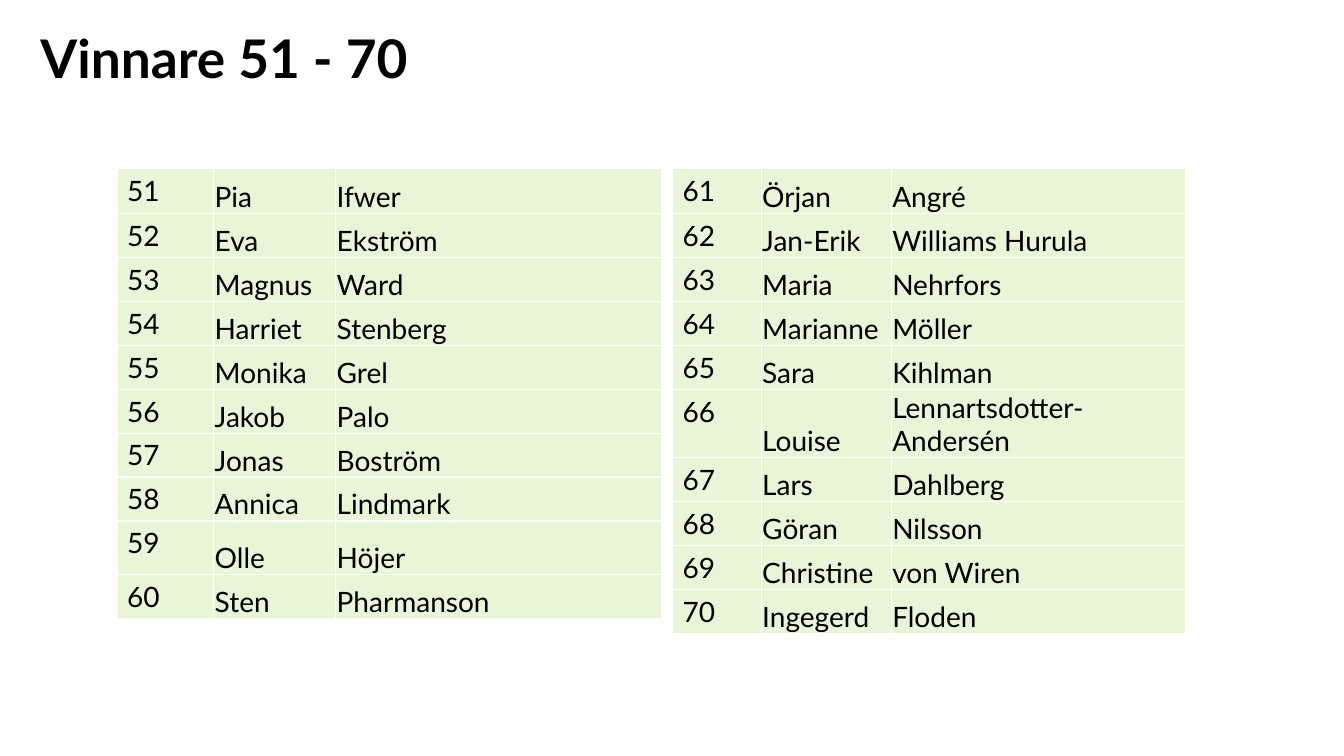
from dataclasses import dataclass

import pptx
import pptx.dml.color
import pptx.enum.text
import pptx.oxml
import pptx.oxml.ns
import pptx.util
from pptx.util import Inches


@dataclass(frozen=True)
class Theme:
    font: str = "Lato"
    text: str = "000000"
    cell: str = "E8F5D6"
    border: str = "FFFFFF"
    border_width: int = 1
    title_size: int = 38
    body_size: int = 20


THEME = Theme()
ANCHOR = pptx.enum.text.MSO_ANCHOR
ROW_HEIGHT = 0.41

WINNERS_51 = [
    ("Pia", "Ifwer"), ("Eva", "Ekström"), ("Magnus", "Ward"),
    ("Harriet", "Stenberg"), ("Monika", "Grel"), ("Jakob", "Palo"),
    ("Jonas", "Boström"), ("Annica", "Lindmark"), ("Olle", "Höjer"),
    ("Sten", "Pharmanson"),
]
WINNERS_61 = [
    ("Örjan", "Angré"), ("Jan-Erik", "Williams Hurula"), ("Maria", "Nehrfors"),
    ("Marianne", "Möller"), ("Sara", "Kihlman"),
    ("Louise", "Lennartsdotter-Andersén"), ("Lars", "Dahlberg"),
    ("Göran", "Nilsson"), ("Christine", "von Wiren"), ("Ingegerd", "Floden"),
]


def rgb(value):
    return pptx.dml.color.RGBColor.from_string(value)


def format_text(frame, size, bold=False):
    for para in frame.paragraphs:
        for span in para.runs:
            span.font.name = THEME.font
            span.font.size = pptx.util.Pt(size)
            span.font.bold = bold
            span.font.color.rgb = rgb(THEME.text)


def add_title(page, text):
    title = page.shapes.title
    title.left, title.top = Inches(0.4), Inches(-0.03)
    title.width, title.height = Inches(11.27), Inches(1.66)
    frame = title.text_frame
    frame.text = text
    frame.word_wrap = True
    frame.auto_size = pptx.enum.text.MSO_AUTO_SIZE.NONE
    frame.vertical_anchor = ANCHOR.TOP
    frame.margin_left = frame.margin_right = frame.margin_bottom = 0
    frame.margin_top = Inches(0.28)
    frame.paragraphs[0].alignment = pptx.enum.text.PP_ALIGN.LEFT
    format_text(frame, THEME.title_size, bold=True)


def set_borders(cell):
    properties = cell._tc.get_or_add_tcPr()
    width = pptx.util.Pt(THEME.border_width)
    # Border lines must come before the cell fill
    for index, side in enumerate(("lnL", "lnR", "lnT", "lnB")):
        properties.insert(index, pptx.oxml.parse_xml(
            f'<a:{side} {pptx.oxml.ns.nsdecls("a")} w="{width}"><a:solidFill>'
            f'<a:srgbClr val="{THEME.border}"/></a:solidFill></a:{side}>'))


def fill_cell(cell, text, is_name):
    cell.text_frame.text = text
    format_text(cell.text_frame, THEME.body_size)
    cell.fill.solid()
    cell.fill.fore_color.rgb = rgb(THEME.cell)
    if is_name:
        cell.vertical_anchor = ANCHOR.BOTTOM
        cell.margin_left = cell.margin_right = cell.margin_top = Inches(0.01)
        cell.margin_bottom = 0
    set_borders(cell)


def add_winners(page, left, first_number, winners, widths, special_heights):
    frame = page.shapes.add_table(
        len(winners), len(widths), Inches(left), Inches(1.67),
        Inches(sum(widths)), Inches(ROW_HEIGHT * len(winners)))
    table = frame.table
    table.first_row = table.horz_banding = False
    for column, width in zip(table.columns, widths):
        column.width = Inches(width)
    for index, names in enumerate(winners):
        number = first_number + index
        table.rows[index].height = Inches(special_heights.get(number, ROW_HEIGHT))
        for column, text in enumerate((str(number), *names)):
            fill_cell(table.cell(index, column), text, is_name=column > 0)


def main():
    deck = pptx.Presentation()
    deck.slide_width, deck.slide_height = Inches(13.33), Inches(7.5)
    page = deck.slides.add_slide(deck.slide_layouts.get_by_name("Title Only"))

    # Heading
    add_title(page, "Vinnare 51 - 70")

    # Winner lists
    add_winners(page, 1.16, 51, WINNERS_51, (0.96, 1.21, 3.23),
                {51: 0.45, 59: 0.53, 60: 0.23})
    add_winners(page, 6.67, 61, WINNERS_61, (0.88, 1.29, 2.92), {61: 0.45})

    deck.save("out.pptx")


if __name__ == "__main__":
    main()
